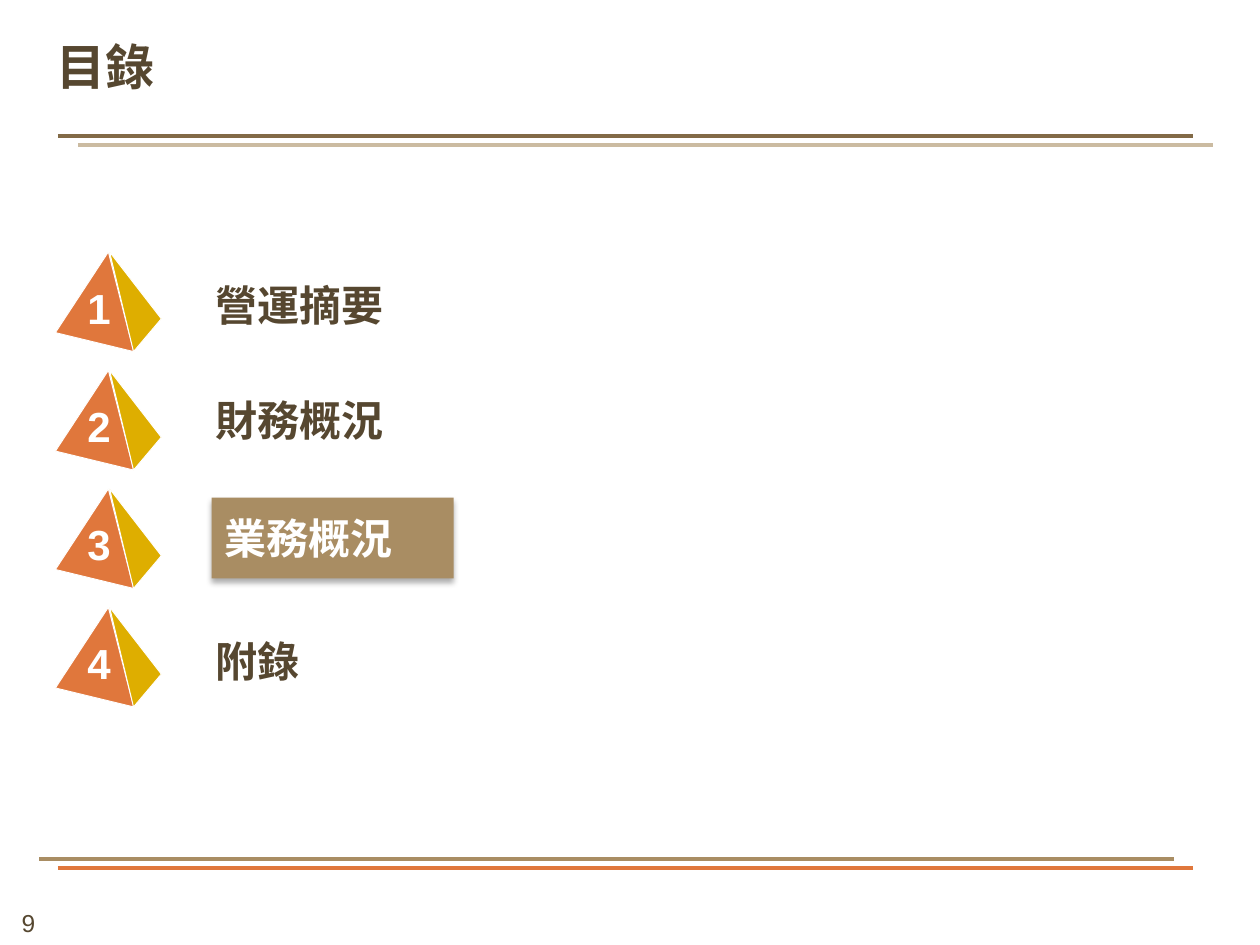
"""Build the contents slide with four pyramid-numbered agenda entries."""
import pptx
import pptx.dml.color
import pptx.enum.shapes
import pptx.enum.text
import pptx.oxml
import pptx.oxml.ns
import pptx.util

Inches = pptx.util.Inches
Pt = pptx.util.Pt
RGBColor = pptx.dml.color.RGBColor
ALIGN = pptx.enum.text.PP_ALIGN
ANCHOR = pptx.enum.text.MSO_ANCHOR

BROWN = RGBColor(0x56, 0x47, 0x30)
DARK_TAN = RGBColor(0x82, 0x6A, 0x47)
TAN = RGBColor(0xA9, 0x8D, 0x63)
LIGHT_TAN = RGBColor(0xCB, 0xBB, 0xA1)
ORANGE = RGBColor(0xE0, 0x77, 0x3C)
GOLD = RGBColor(0xDE, 0xAE, 0x00)
WHITE = RGBColor(0xFF, 0xFF, 0xFF)
CJK_FONT = "Noto Sans CJK SC"
LATIN_FONT = "Arial"

TITLE = "目錄"
PAGE_NUMBER = "9"
AGENDA = [
    ("營運摘要", (1.61, 2.08, 3.31, 0.68), False),
    ("財務概況", (1.61, 3.01, 2.42, 0.64), False),
    ("業務概況", (1.68, 3.95, 1.92, 0.64), True),
    ("附錄", (1.61, 4.92, 2.42, 0.64), False),
]
RULES = [(0.46, 6.89, ORANGE), (0.31, 6.82, TAN), (0.62, 1.15, LIGHT_TAN), (0.46, 1.08, DARK_TAN)]
RULE_LENGTH = 9.01
PYRAMID_TOP, PYRAMID_STEP = 2, 0.94
PYRAMID_FACES = [
    (ORANGE, [(0.86, 0), (0.44, 0.64), (1.06, 0.79)]),
    (GOLD, [(0.87, 0), (1.28, 0.53), (1.06, 0.79)]),
]
EMPTY_EFFECTS = "<a:effectLst %s/>" % pptx.oxml.ns.nsdecls("a")
SOFT_SHADOW = (
    '<a:effectLst %s><a:outerShdw blurRad="44450" dist="27940" dir="5400000" rotWithShape="0">'
    '<a:srgbClr val="000000"><a:alpha val="32000"/></a:srgbClr></a:outerShdw></a:effectLst>'
    % pptx.oxml.ns.nsdecls("a")
)


def write_text(shape, text, size, color, font_name, bold=True, align=ALIGN.LEFT):
    paragraph = shape.text_frame.paragraphs[0]
    paragraph.text = text
    paragraph.alignment = align
    font = paragraph.font
    font.size, font.bold, font.name = Pt(size), bold, font_name
    font.color.rgb = color
    if font_name == CJK_FONT:
        properties = paragraph._p.pPr.find(pptx.oxml.ns.qn("a:defRPr"))
        properties.append(pptx.oxml.parse_xml(
            '<a:ea %s typeface="%s"/>' % (pptx.oxml.ns.nsdecls("a"), CJK_FONT)))
    return paragraph


def clear_margins(frame):
    frame.margin_left = frame.margin_right = frame.margin_top = frame.margin_bottom = 0


def add_rule(slide, left, top, color):
    rule = slide.shapes.add_connector(
        pptx.enum.shapes.MSO_CONNECTOR.STRAIGHT,
        Inches(left), Inches(top), Inches(left + RULE_LENGTH), Inches(top))
    rule.line.color.rgb = color
    rule.line.width = Pt(2.25)
    rule._element.spPr.append(pptx.oxml.parse_xml(EMPTY_EFFECTS))


def add_pyramid(slide, number, top):
    group = slide.shapes.add_group_shape()
    for color, corners in PYRAMID_FACES:
        points = [(Inches(x), Inches(top + y)) for x, y in corners]
        builder = group.shapes.build_freeform(*points[0])
        builder.add_line_segments(points[1:], close=True)
        face = builder.convert_to_shape()
        face.shadow.inherit = False
        face.fill.solid()
        face.fill.fore_color.rgb = color
        face.line.color.rgb = WHITE
        face.line.width = Pt(0.5)
    label = group.shapes.add_textbox(Inches(0.69), Inches(top + 0.3), Inches(0.19), Inches(0.34))
    frame = label.text_frame
    clear_margins(frame)
    frame.word_wrap = False
    frame.vertical_anchor = ANCHOR.MIDDLE
    paragraph = write_text(label, str(number), 24, WHITE, LATIN_FONT, align=ALIGN.CENTER)
    paragraph.line_spacing = 0.85


def add_entry(slide, text, box, current):
    place = [Inches(value) for value in box]
    if current:
        shape = slide.shapes.add_shape(pptx.enum.shapes.MSO_SHAPE.RECTANGLE, *place)
        shape.fill.solid()
        shape.fill.fore_color.rgb = TAN
        shape.line.fill.background()
        shape._element.spPr.append(pptx.oxml.parse_xml(SOFT_SHADOW))
    else:
        shape = slide.shapes.add_textbox(*place)
    shape.text_frame.word_wrap = True
    shape.text_frame.vertical_anchor = ANCHOR.MIDDLE
    write_text(shape, text, 24, WHITE if current else BROWN, CJK_FONT)


def main():
    presentation = pptx.Presentation()
    presentation.slide_width, presentation.slide_height = Inches(10), Inches(7.5)
    slide = presentation.slides.add_slide(presentation.slide_layouts[5])

    title = slide.shapes.title
    title.left, title.top, title.width, title.height = map(Inches, (0.45, 0.25, 9.41, 0.51))
    clear_margins(title.text_frame)
    title.text_frame.vertical_anchor = ANCHOR.BOTTOM
    write_text(title, TITLE, 28, BROWN, CJK_FONT).line_spacing = Pt(40)

    page = slide.shapes.add_textbox(*map(Inches, (-0.17, 7.16, 0.79, 0.34)))
    page.text_frame.word_wrap = True
    write_text(page, PAGE_NUMBER, 14, BROWN, LATIN_FONT, bold=False, align=ALIGN.CENTER)

    for rule in RULES:
        add_rule(slide, *rule)
    for index, entry in enumerate(AGENDA):
        add_pyramid(slide, index + 1, PYRAMID_TOP + index * PYRAMID_STEP)
        add_entry(slide, *entry)
    presentation.save("out.pptx")


if __name__ == "__main__":
    main()
